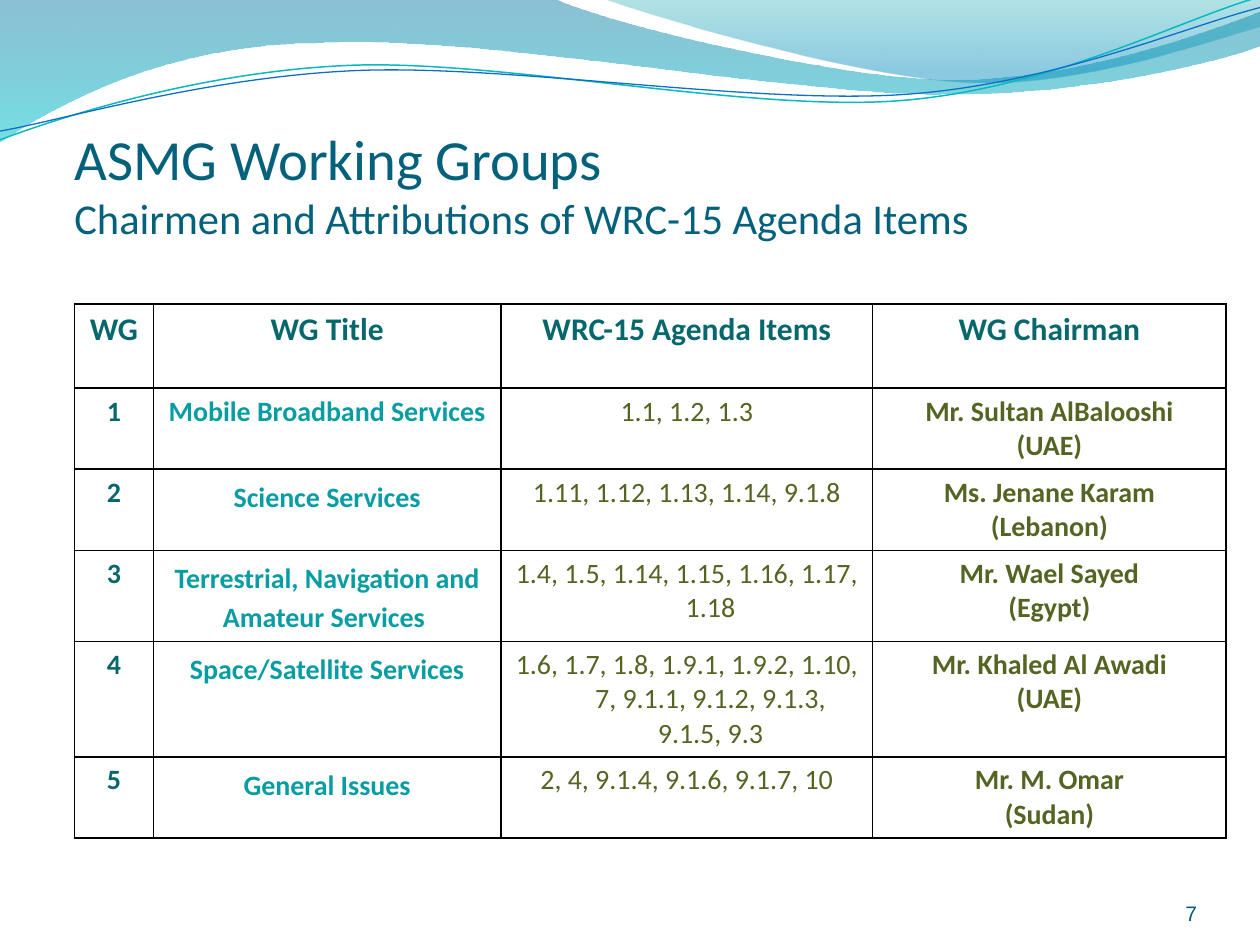
from lxml import etree
from pptx import Presentation
from pptx.dml.color import RGBColor
from pptx.enum.text import MSO_ANCHOR, MSO_AUTO_SIZE, PP_ALIGN
from pptx.oxml.ns import qn
from pptx.util import Pt

LEFT, MID, RIGHT = PP_ALIGN.LEFT, PP_ALIGN.CENTER, PP_ALIGN.RIGHT
BOTTOM = MSO_ANCHOR.BOTTOM
FIXED = MSO_AUTO_SIZE.NONE

HUES = {
    "title": "04617B", "page": "045D75", "head": "06686C",
    "group": "089CA3", "item": "546422", "rule": "000000",
    "deep": "0074A1", "aqua": "00C6CF", "teal": "00A1A9", "sky": "008BBF",
    "cyan": "0AB8BF", "blue": "0F6FC6",
}

TITLE = [("ASMG Working Groups ", 32.4),
         ("Chairmen and Attributions of WRC-15 Agenda Items", 24.3)]
PAGE = "7"
HEADS = ["WG", "WG Title", "WRC-15 Agenda Items", "WG Chairman"]
GROUPS = [
    ("Mobile Broadband Services", "1.1, 1.2, 1.3",
     "Mr. Sultan AlBalooshi", "(UAE)"),
    ("Science Services", "1.11, 1.12, 1.13, 1.14, 9.1.8",
     "Ms. Jenane Karam", "(Lebanon)"),
    ("Terrestrial, Navigation and Amateur Services ",
     "1.4, 1.5, 1.14, 1.15, 1.16, 1.17, 1.18",
     "Mr. Wael Sayed", "(Egypt)"),
    ("Space/Satellite Services",
     "1.6, 1.7, 1.8, 1.9.1, 1.9.2, 1.10, 7, 9.1.1, 9.1.2, 9.1.3, 9.1.5, 9.3",
     "Mr. Khaled Al Awadi", "(UAE)"),
    ("General Issues", "2, 4, 9.1.4, 9.1.6, 9.1.7, 10",
     "Mr. M. Omar", "(Sudan)"),
]
WIDTHS = [45.2, 198.6, 212.4, 202]
HEAD_H, ROW_H = 48, 46.2
INDENT = 27

BANDS = [
    ([(0, -0.7), (316.8, -0.7),
      (342.7, 12.2, 478.1, 45.4, 545.8, 45.4),
      (614.2, 45.4, 689.8, 18.7, 720, 6.5), (720.7, 25.9),
      (707.8, 31.7, 626.4, 54.7, 537.1, 54),
      (447.8, 54, 275, 20.2, 185, 24.5),
      (92.9, 25.2, 33.1, 59.8, -0.7, 81.4)],
     [(0, "deep", 45), (1, "aqua", 55)]),
    ([(344.9, -0.7), (366.5, 7.9, 491, 44.6, 553.7, 46.8),
      (616.3, 49.7, 691.9, 23, 720, 15.1), (720, 0)],
     [(0, "teal", 30), (0.8, "sky", 45)]),
]
WAVES = [
    ([(0, 79.9), (34.6, 67, 113.8, 41, 199.4, 37.4),
      (284.4, 33.8, 427, 64.1, 513.4, 57.6),
      (599.8, 51.1, 675.4, 10.8, 718.6, -1.4)], "cyan", 0.85),
    ([(0, 74.9), (33.8, 69.1, 118.1, 43.9, 203.8, 40.3),
      (290.2, 36.7, 429.8, 59.8, 516.2, 54),
      (601.9, 48.2, 677.5, 15.1, 720, 4.3)], "blue", 0.75),
]


def rgb(hue):
    return RGBColor.from_string(HUES[hue])


def draw(slide, nodes, close):
    dots = [(Pt(x), Pt(y)) for node in nodes
            for x, y in zip(node[::2], node[1::2])]
    pen = slide.shapes.build_freeform(*dots[0])
    pen.add_line_segments(dots[1:], close=close)
    shape = pen.convert_to_shape()
    shape.shadow.inherit = False
    legs = iter(list(shape._element.iter(qn("a:lnTo"))))
    for node in nodes[1:]:
        leg = next(legs)
        if len(node) == 6:
            leg.addprevious(etree.Element(qn("a:cubicBezTo")))
            curve = leg.getprevious()
            for part in (leg, next(legs), next(legs)):
                curve.append(part[0])
                part.getparent().remove(part)
    return shape


def add_band(slide, nodes, stops):
    shape = draw(slide, nodes, True)
    shape.line.fill.background()
    shape.fill.gradient()
    shape.fill.gradient_angle = 270
    for stop, (place, hue, alpha) in zip(shape.fill.gradient_stops, stops):
        stop.position = place
        stop.color.rgb = rgb(hue)
    tints = shape.fill._xPr.iter(qn("a:srgbClr"))
    for tint, (place, hue, alpha) in zip(tints, stops):
        etree.SubElement(tint, qn("a:alpha"), val=str(alpha * 1000))


def add_wave(slide, nodes, hue, width):
    shape = draw(slide, nodes, False)
    shape.fill.background()
    shape.line.color.rgb = rgb(hue)
    shape.line.width = Pt(width)


def add_run(para, text, size, hue, bold=False, font="Calibri"):
    run = para.add_run()
    run.text = text
    run.font.size = Pt(size)
    run.font.name = font
    run.font.bold = bold
    run.font.color.rgb = rgb(hue)


def set_frame(frame, top=0):
    frame.word_wrap = True
    frame.auto_size = FIXED
    frame.vertical_anchor = BOTTOM
    frame.margin_left = frame.margin_right = frame.margin_bottom = 0
    frame.margin_top = Pt(top)


def add_title(slide):
    title = slide.shapes.title
    title.left, title.top = Pt(42.5), Pt(88.6)
    title.width, title.height = Pt(630), Pt(50.4)
    set_frame(title.text_frame, 3.6)
    para = title.text_frame.paragraphs[0]
    para.alignment = LEFT
    for rank, (text, size) in enumerate(TITLE):
        if rank:
            para.add_line_break()
        add_run(para, text, size, "title")


def add_page(slide):
    box = slide.shapes.add_textbox(Pt(624), Pt(500.4), Pt(60), Pt(28.8))
    set_frame(box.text_frame)
    para = box.text_frame.paragraphs[0]
    para.alignment = RIGHT
    add_run(para, PAGE, 12, "page", font="Arial")


def set_cell(cell, lines, size, hue, bold, loose):
    for rank, text in enumerate(lines):
        frame = cell.text_frame
        para = frame.add_paragraph() if rank else frame.paragraphs[0]
        para.alignment = MID
        if loose:
            para.line_spacing = 1.15
            para.space_after = Pt(10)
        else:
            props = para._p.get_or_add_pPr()
            props.set("marL", str(Pt(INDENT)))
            props.set("indent", str(Pt(-INDENT)))
        add_run(para, text, size, hue, bold)
    props = cell._tc.get_or_add_tcPr()
    for side in "LRTB":
        line = etree.SubElement(props, qn("a:ln" + side), w=str(Pt(1)))
        fill = etree.SubElement(line, qn("a:solidFill"))
        etree.SubElement(fill, qn("a:srgbClr"), val=HUES["rule"])
    cell.fill.background()


def add_grid(slide):
    count = len(GROUPS)
    frame = slide.shapes.add_table(
        count + 1, len(HEADS), Pt(42.5), Pt(173.75),
        Pt(sum(WIDTHS)), Pt(HEAD_H + count * ROW_H))
    grid = frame.table
    grid.first_row = grid.horz_banding = False
    for col, width in zip(grid.columns, WIDTHS):
        col.width = Pt(width)
    for rank, row in enumerate(grid.rows):
        row.height = Pt(ROW_H if rank else HEAD_H)
    for col, text in enumerate(HEADS):
        set_cell(grid.cell(0, col), [text], 18, "head", True, False)
    for row, (group, items, chair, land) in enumerate(GROUPS, 1):
        cells = [([str(row)], "head", True, False),
                 ([group], "group", True, row > 1),
                 ([items], "item", False, False),
                 ([chair, land], "item", True, False)]
        for col, (lines, hue, bold, loose) in enumerate(cells):
            set_cell(grid.cell(row, col), lines, 16, hue, bold, loose)


def main():
    deck = Presentation()
    deck.slide_width, deck.slide_height = Pt(720), Pt(540)
    slide = deck.slides.add_slide(deck.slide_layouts[5])
    for band in BANDS:
        add_band(slide, *band)
    for wave in WAVES:
        add_wave(slide, *wave)
    add_page(slide)
    add_grid(slide)
    add_title(slide)
    deck.save("out.pptx")


if __name__ == "__main__":
    main()
